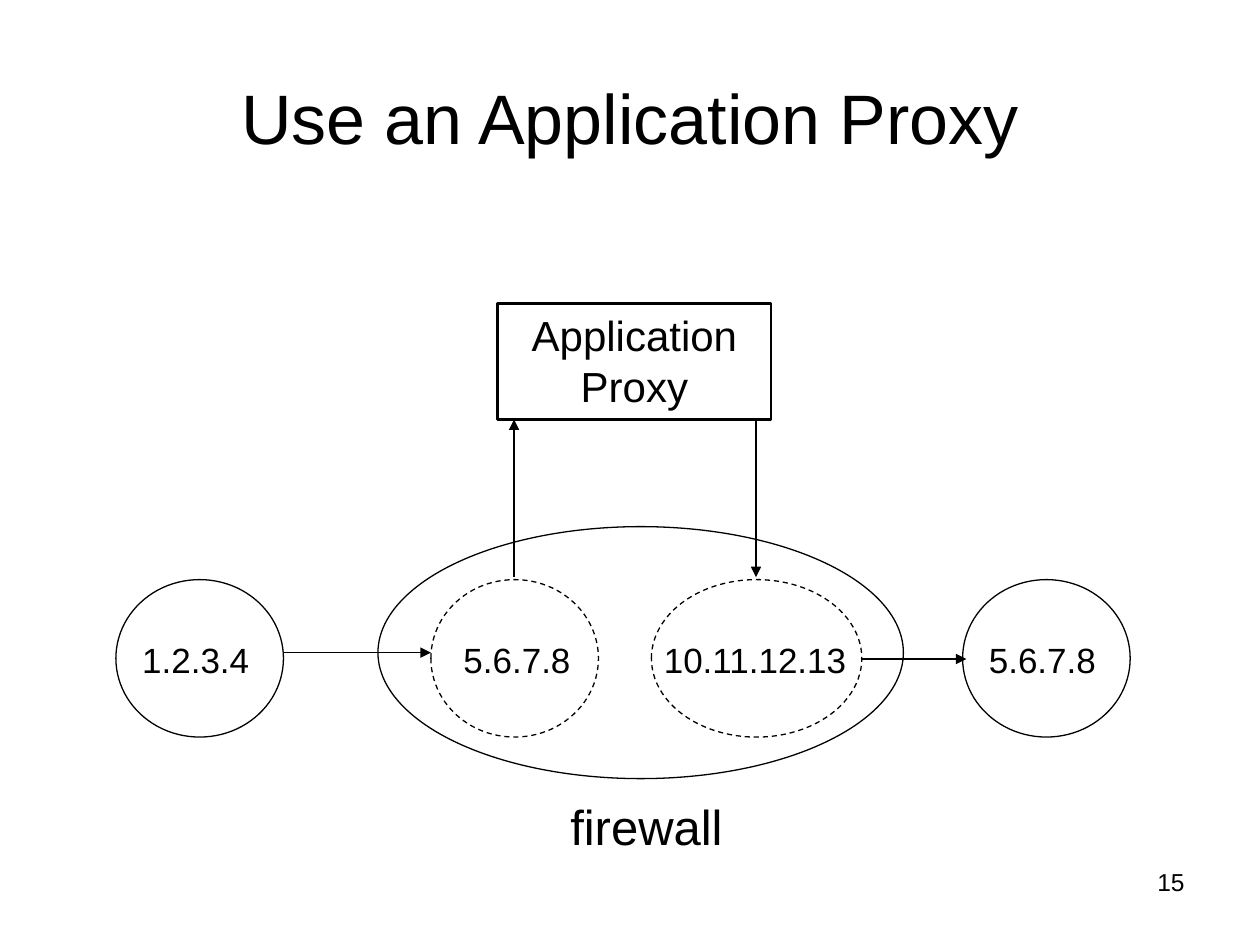
from lxml import etree
from pptx import Presentation
from pptx.dml.color import RGBColor
from pptx.enum.dml import MSO_LINE
from pptx.enum.shapes import MSO_CONNECTOR, MSO_SHAPE
from pptx.enum.text import MSO_ANCHOR, PP_ALIGN
from pptx.oxml.ns import qn
from pptx.util import Inches, Pt

BLACK = RGBColor(0, 0, 0)
FONT = "Arial"
OVAL, RECT = MSO_SHAPE.OVAL, MSO_SHAPE.RECTANGLE
STRAIGHT = MSO_CONNECTOR.STRAIGHT
DASH = MSO_LINE.DASH
LEFT, CENTER, RIGHT = PP_ALIGN.LEFT, PP_ALIGN.CENTER, PP_ALIGN.RIGHT
TOP, MIDDLE = MSO_ANCHOR.TOP, MSO_ANCHOR.MIDDLE

HOST_TOP, HOST_TALL = 4.6, 1.25
BOX_TOP, BOX_TALL = 2.41, 0.92
BOX_END = BOX_TOP + BOX_TALL


def set_text(shape, text, size, align, anchor=TOP):
    frame = shape.text_frame
    frame.word_wrap = True
    frame.vertical_anchor = anchor
    frame.text = text
    para = frame.paragraphs[0]
    para.alignment = align
    font = para.runs[0].font
    font.name, font.size = FONT, Pt(size)
    font.color.rgb = BLACK


def add_label(slide, text, x, y, wide, tall, size, align=LEFT, anchor=TOP):
    box = slide.shapes.add_textbox(Inches(x), Inches(y), Inches(wide), Inches(tall))
    set_text(box, text, size, align, anchor)


def add_outline(slide, kind, x, y, wide, tall, weight=0.75, dash=None):
    """Add an unfilled shape with a black line."""
    shape = slide.shapes.add_shape(
        kind, Inches(x), Inches(y), Inches(wide), Inches(tall))
    shape.shadow.inherit = False
    shape.fill.background()
    shape.line.color.rgb = BLACK
    shape.line.width = Pt(weight)
    if dash:
        shape.line.dash_style = dash
    return shape


def add_host(slide, text, x, wide, text_x, text_wide, dash=None):
    """Add an oval for one address, with the address over it."""
    add_outline(slide, OVAL, x, HOST_TOP, wide, HOST_TALL, dash=dash)
    add_label(slide, text, text_x, 5.02, text_wide, 0.43, 20)


def add_arrow(slide, x1, y1, x2, y2):
    arrow = slide.shapes.add_connector(
        STRAIGHT, Inches(x1), Inches(y1), Inches(x2), Inches(y2))
    arrow.line.color.rgb = BLACK
    arrow.line.width = Pt(0.75)
    props = arrow.line._get_or_add_ln()
    etree.SubElement(props, qn("a:tailEnd"), type="triangle")
    etree.SubElement(props.getparent(), qn("a:effectLst"))


def main():
    deck = Presentation()
    deck.slide_width, deck.slide_height = Inches(10), Inches(7.5)
    slide = deck.slides.add_slide(deck.slide_layouts[6])

    add_label(slide, "Use an Application Proxy", 0.5, 0.3, 9, 1.25, 40, CENTER, MIDDLE)

    add_outline(slide, OVAL, 3, 4.18, 4.17, 2)
    add_label(slide, "firewall", 3.67, 6.27, 2.92, 0.57, 28, CENTER)

    hosts = [
        ("1.2.3.4", 0.92, 1.33, 1.03, 1.5, None),
        ("5.6.7.8", 3.42, 1.33, 3.58, 1.5, DASH),
        ("10.11.12.13", 5.17, 1.67, 5.17, 1.83, DASH),
        ("5.6.7.8", 7.64, 1.33, 7.75, 1.5, None),
    ]
    for host in hosts:
        add_host(slide, *host)

    proxy = add_outline(slide, RECT, 3.95, BOX_TOP, 2.17, BOX_TALL, 1.5)
    set_text(proxy, "Application Proxy", 24, CENTER)

    arrows = [
        (2.25, 5.18, 3.42, 5.18),
        (4.08, 4.58, 4.08, BOX_END),
        (6, BOX_END, 6, 4.58),
        (6.83, 5.23, 7.67, 5.23),
    ]
    for ends in arrows:
        add_arrow(slide, *ends)

    add_label(slide, "15", 7.17, 6.83, 2.33, 0.52, 14, RIGHT)
    deck.save("out.pptx")


if __name__ == "__main__":
    main()
